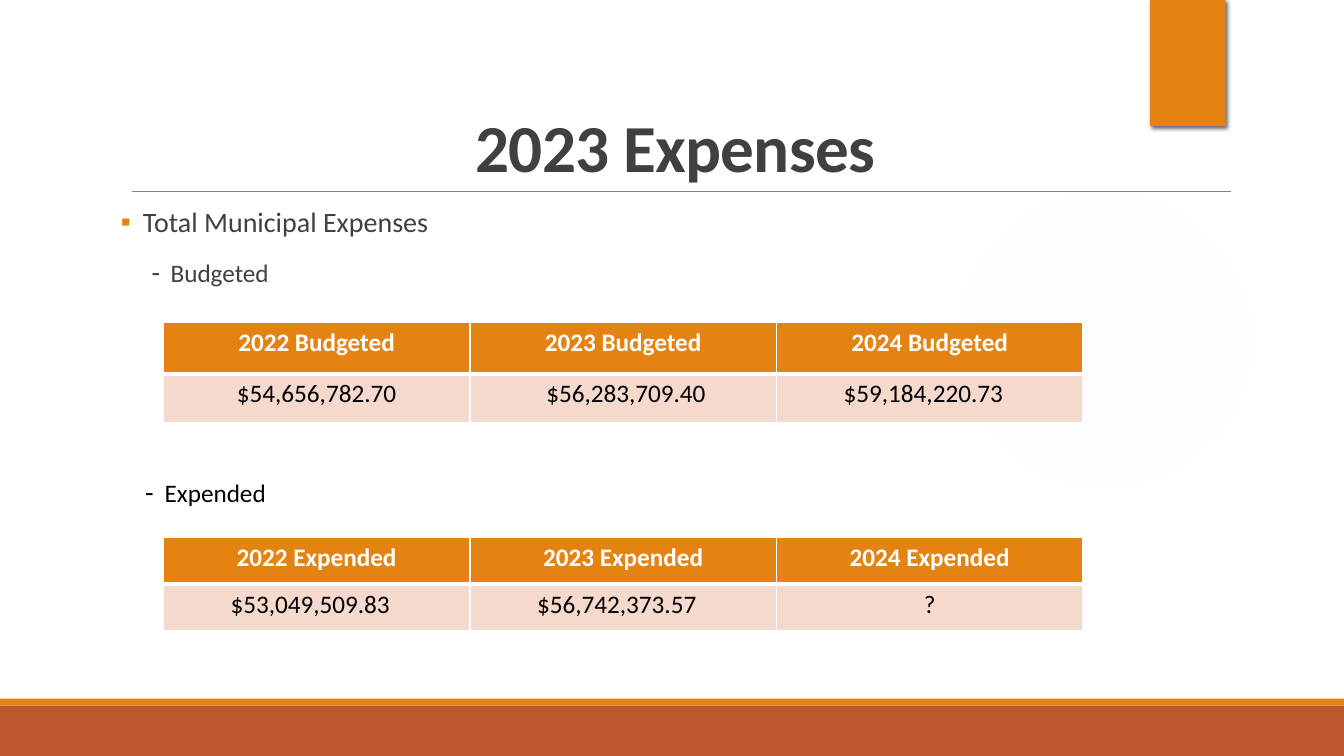
from pptx import Presentation
from pptx.dml.color import RGBColor
from pptx.enum.shapes import MSO_CONNECTOR, MSO_SHAPE
from pptx.enum.text import MSO_ANCHOR, PP_ALIGN
from pptx.oxml import parse_xml
from pptx.oxml.ns import nsdecls, qn
from pptx.util import Pt

COLORS = {
    "orange": "E48312", "rust": "BD582C", "peach": "F5D9CC", "mist": "E0EBF2",
    "dark": "404040", "gray": "808080", "white": "FFFFFF", "black": "000000",
}
NAMESPACE = nsdecls("a")
CENTER, LEFT = PP_ALIGN.CENTER, PP_ALIGN.LEFT


def add_text(paragraph, text, size, color, bold=False, **layout):
    """Write one formatted run and set the paragraph's layout attributes."""
    for name, value in layout.items():
        setattr(paragraph, name, value)
    run = paragraph.add_run()
    run.text = text
    for name, value in {"name": "Calibri", "size": Pt(size), "bold": bold}.items():
        setattr(run.font, name, value)
    run.font.color.rgb = RGBColor.from_string(COLORS[color])
    return run


def add_bullet(paragraph, character, color, size_percent, margin, hanging):
    properties = paragraph._p.get_or_add_pPr()
    properties.set("marL", str(Pt(margin)))
    properties.set("indent", str(-Pt(hanging)))
    for element in (
        f'<a:buClr {NAMESPACE}><a:srgbClr val="{COLORS[color]}"/></a:buClr>',
        f'<a:buSzPct {NAMESPACE} val="{size_percent * 1000}"/>',
        f'<a:buFont {NAMESPACE} typeface="Calibri"/>',
        f'<a:buChar {NAMESPACE} char="{character}"/>',
    ):
        properties.append(parse_xml(element))


presentation = Presentation()
presentation.slide_width, presentation.slide_height = Pt(960), Pt(540)
slide = presentation.slides.add_slide(presentation.slide_layouts[6])
shapes = slide.shapes

# Footer bands, soft glow and corner tab
decorations = {}
for name, kind, color, left, top, width, height in (
    ("footer", MSO_SHAPE.RECTANGLE, "rust", 0, 504, 960, 36),
    ("stripe", MSO_SHAPE.RECTANGLE, "orange", 0, 499, 960, 5),
    ("glow", MSO_SHAPE.OVAL, "mist", 677.5, 131.8, 221.8, 221.8),
    ("tab", MSO_SHAPE.RECTANGLE, "orange", 821.5, 0, 54, 90),
):
    shape = shapes.add_shape(kind, Pt(left), Pt(top), Pt(width), Pt(height))
    shape.shadow.inherit = False
    shape.fill.solid()
    shape.fill.fore_color.rgb = RGBColor.from_string(COLORS[color])
    shape.line.fill.background()
    decorations[name] = shape

glow_properties = decorations["glow"]._element.spPr
stops = "".join(
    f'<a:gs pos="{position * 1000}"><a:srgbClr val="{COLORS["mist"]}">'
    f'<a:alpha val="{alpha * 1000}"/></a:srgbClr></a:gs>'
    for position, alpha in ((0, 7), (36, 6), (69, 0), (100, 0))
)
glow_properties.replace(glow_properties.find(qn("a:solidFill")), parse_xml(
    f'<a:gradFill {NAMESPACE}><a:gsLst>{stops}</a:gsLst><a:path path="circle">'
    '<a:fillToRect l="50000" t="50000" r="50000" b="50000"/></a:path></a:gradFill>'
))
decorations["tab"]._element.spPr.find(qn("a:effectLst")).append(parse_xml(
    f'<a:outerShdw {NAMESPACE} blurRad="{Pt(3)}" dist="{Pt(2)}" dir="2700000">'
    f'<a:srgbClr val="{COLORS["black"]}"><a:alpha val="60000"/></a:srgbClr></a:outerShdw>'
))

title_rule = shapes.add_connector(
    MSO_CONNECTOR.STRAIGHT, Pt(94.3), Pt(136.8), Pt(879.1), Pt(136.8))
title_rule.line.color.rgb = RGBColor.from_string(COLORS["gray"])
title_rule.line.width = Pt(0.5)
title_rule._element.spPr.append(parse_xml(f"<a:effectLst {NAMESPACE}/>"))

# Text boxes
frames = {}
for name, left, top, width, height, side_margin in (
    ("title", 86.4, 22.3, 792, 114.5, 7.2),
    ("body", 86.4, 145.4, 792, 316.8, 0),
    ("expended", 85, 337.7, 695.5, 31.7, 7.2),
):
    frame = shapes.add_textbox(Pt(left), Pt(top), Pt(width), Pt(height)).text_frame
    frame.word_wrap = True
    frame.margin_left = frame.margin_right = Pt(side_margin)
    frames[name] = frame

frames["title"].vertical_anchor = MSO_ANCHOR.BOTTOM
title_run = add_text(frames["title"].paragraphs[0], "2023 Expenses", 48, "dark", True,
                     alignment=CENTER, line_spacing=0.85)
title_run._r.get_or_add_rPr().set("spc", "-50")

total = frames["body"].paragraphs[0]
add_bullet(total, "▪", "orange", 100, 15.7, 15.7)
add_text(total, "Total Municipal Expenses", 20, "dark", line_spacing=0.9, space_after=Pt(2))
budgeted = frames["body"].add_paragraph()
add_bullet(budgeted, "-", "dark", 111, 35.5, 13.5)
add_text(budgeted, "Budgeted", 18, "dark", line_spacing=0.9, space_before=Pt(13.5))
expended = frames["expended"].paragraphs[0]
add_bullet(expended, "-", "black", 111, 25.5, 14)
add_text(expended, "Expended", 18, "black")

# Tables: each amount has its alignment and left margin
for kind, top, row_heights, amounts in (
    ("Budgeted", 230.4, (36.7, 34.6), (
        ("$54,656,782.70", CENTER, 7.2),
        ("$56,283,709.40", CENTER, 11.2),
        ("$59,184,220.73", LEFT, 48))),
    ("Expended", 383.8, (33.5, 33.5), (
        ("$53,049,509.83", LEFT, 48),
        ("$56,742,373.57", LEFT, 48),
        ("?", CENTER, 7.2))),
):
    table = shapes.add_table(
        2, 3, Pt(116.7), Pt(top), Pt(657), Pt(sum(row_heights))).table
    for row, height in zip(table.rows, row_heights):
        row.height = Pt(height)
    headings = [(f"{year} {kind}", CENTER, 7.2) for year in (2022, 2023, 2024)]
    for row_index, (entries, fill, color) in enumerate((
        (headings, "orange", "white"), (amounts, "peach", "black"),
    )):
        is_heading = row_index == 0
        borders = {"lnL": 1, "lnR": 1, "lnT": 1 if is_heading else 3,
                   "lnB": 3 if is_heading else 1}
        for column_index, (text, alignment, margin) in enumerate(entries):
            cell = table.cell(row_index, column_index)
            cell.margin_left = Pt(margin)
            for side, width in borders.items():
                cell._tc.get_or_add_tcPr().append(parse_xml(
                    f'<a:{side} {NAMESPACE} w="{Pt(width)}"><a:solidFill>'
                    f'<a:srgbClr val="{COLORS["white"]}"/></a:solidFill></a:{side}>'
                ))
            cell.fill.solid()
            cell.fill.fore_color.rgb = RGBColor.from_string(COLORS[fill])
            add_text(cell.text_frame.paragraphs[0], text, 18, color, is_heading,
                     alignment=alignment)

presentation.save("out.pptx")
